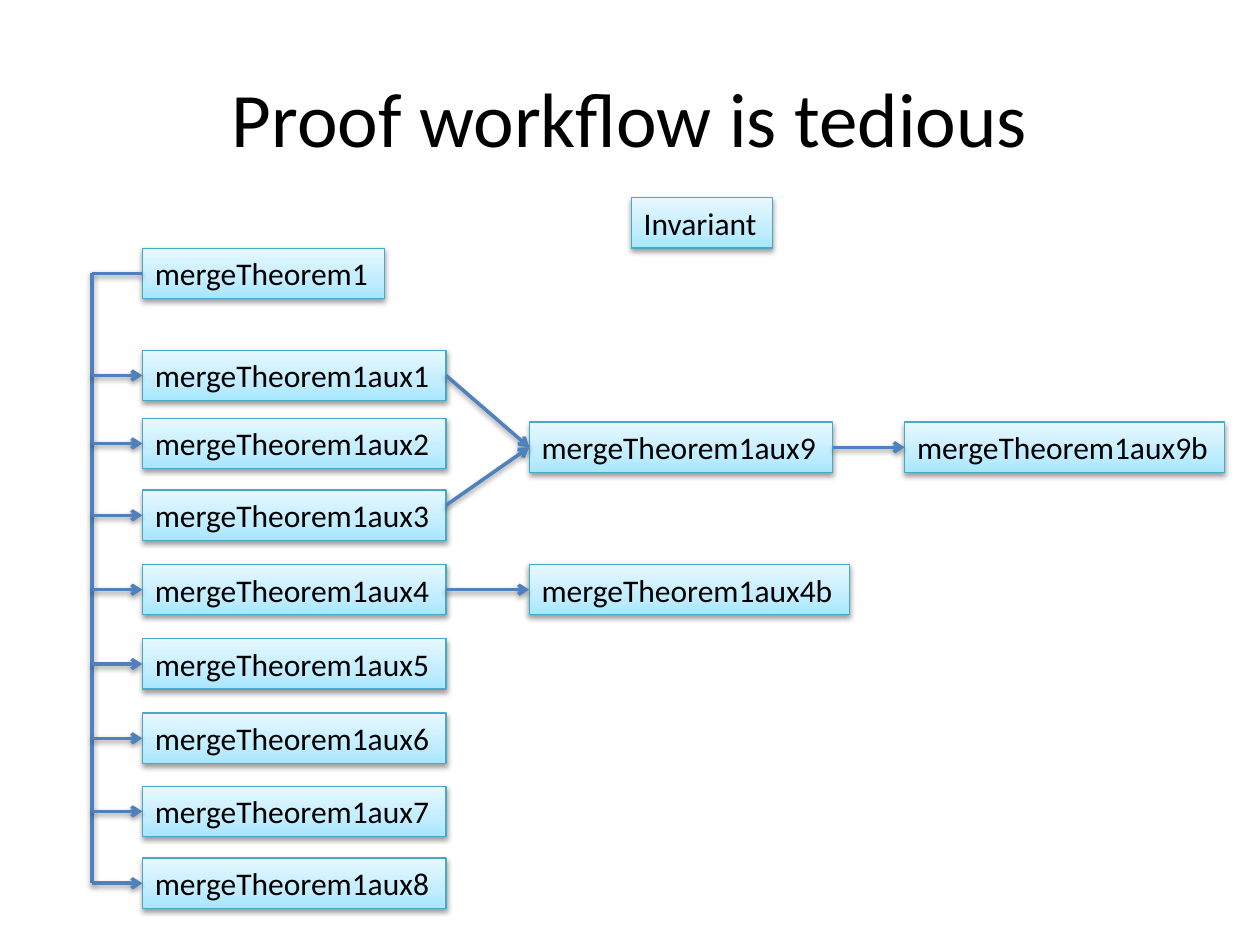
from copy import deepcopy
from dataclasses import dataclass

from lxml import etree
from pptx import Presentation, util as u
from pptx.dml.color import RGBColor
from pptx.enum import shapes, text
from pptx.oxml.ns import qn


@dataclass(frozen=True)
class Theme:
    font: str = "Calibri"
    title_size: int = 44
    box_size: int = 18
    ink: str = "000000"
    box_line: str = "46AAC5"
    arrow: str = "4F81BD"
    gradient: tuple = ((0, "A7E6FF"), (0.35, "C1EDFF"), (1, "E7F8FF"))


THEME = Theme()

# Content: label, column, top, width
TITLE = "Proof workflow is tedious"
ROOT = "mergeTheorem1"
LEMMA_TOPS = [2.78, 3.32, 3.89, 4.48, 5.07, 5.66, 6.24, 6.81]
LEMMAS = [f"{ROOT}aux{n}" for n in range(1, len(LEMMA_TOPS) + 1)]
BOXES = [
    (ROOT, 0, 1.97, 1.92),
    *[(lemma, 0, top, 2.41) for lemma, top in zip(LEMMAS, LEMMA_TOPS)],
    ("mergeTheorem1aux4b", 1, 4.48, 2.54),
    ("mergeTheorem1aux9", 1, 3.35, 2.41),
    ("mergeTheorem1aux9b", 2, 3.35, 2.54),
    ("Invariant", 3, 1.57, 1.12),
]
# Dependencies: from, to, distance of the start above the side's middle
LINKS = [
    ("mergeTheorem1aux1", "mergeTheorem1aux9", 0),
    ("mergeTheorem1aux3", "mergeTheorem1aux9", 0.08),
    ("mergeTheorem1aux9", "mergeTheorem1aux9b", 0),
    ("mergeTheorem1aux4", "mergeTheorem1aux4b", 0),
]

# Grid
COLUMNS = [1.13, 4.2, 7.18, 5.01]
BOX_HEIGHT = 0.4
TRUNK_X = 0.73
LEFT, RIGHT = 1, 3


def write(frame, words, *, size, align, anchor, wrap=True):
    frame.text = words
    frame.word_wrap = wrap
    frame.vertical_anchor = anchor
    paragraph = frame.paragraphs[0]
    paragraph.alignment = align
    font = paragraph.runs[0].font
    font.name, font.size = THEME.font, u.Pt(size)
    font.color.rgb = RGBColor.from_string(THEME.ink)


def add_shadow(part):
    effects = etree.SubElement(part.element.spPr, qn("a:effectLst"))
    shadow = etree.SubElement(effects, qn("a:outerShdw"), blurRad="40000",
                              dist="20000", dir="5400000", rotWithShape="0")
    color = etree.SubElement(shadow, qn("a:srgbClr"), val="000000")
    etree.SubElement(color, qn("a:alpha"), val="38000")


def fill_gradient(box):
    box.fill.gradient()
    box.fill.gradient_angle = 90
    stop_list = box.element.spPr.find(".//" + qn("a:gsLst"))
    stop_list.append(deepcopy(stop_list[-1]))
    for stop, (position, color) in zip(box.fill.gradient_stops, THEME.gradient):
        stop.position = position
        stop.color.rgb = RGBColor.from_string(color)


def add_box(slide, label, column, top, width):
    box = slide.shapes.add_shape(
        shapes.MSO_SHAPE.RECTANGLE, u.Inches(COLUMNS[column]), u.Inches(top),
        u.Inches(width), u.Inches(BOX_HEIGHT))
    fill_gradient(box)
    box.line.color.rgb = RGBColor.from_string(THEME.box_line)
    box.line.width = u.Pt(0.75)
    add_shadow(box)
    write(box.text_frame, label, size=THEME.box_size, wrap=False,
          align=text.PP_ALIGN.LEFT, anchor=text.MSO_ANCHOR.TOP)
    box.text_frame.auto_size = text.MSO_AUTO_SIZE.SHAPE_TO_FIT_TEXT
    return box


def add_line(slide, start, end, *, source=None, target=None, head=True):
    """Draw from start to end; source and target are (box, side) joins."""
    line = slide.shapes.add_connector(shapes.MSO_CONNECTOR.STRAIGHT, *start, *end)
    if source:
        line.begin_connect(*source)
    if target:
        line.end_connect(*target)
    line.line.color.rgb = RGBColor.from_string(THEME.arrow)
    line.line.width = u.Pt(2)
    if head:
        etree.SubElement(line.line._get_or_add_ln(), qn("a:tailEnd"), type="arrow")
    add_shadow(line)


def side_middle(box, side):
    return box.left + (box.width if side == RIGHT else 0), box.top + box.height // 2


def main():
    deck = Presentation()
    deck.slide_width, deck.slide_height = u.Inches(10), u.Inches(7.5)
    slide = deck.slides.add_slide(deck.slide_layouts[5])

    # Title
    title = slide.shapes.title
    title.left, title.top, title.width, title.height = map(
        u.Inches, (0.5, 0.3, 9, 1.25))
    write(title.text_frame, TITLE, size=THEME.title_size,
          align=text.PP_ALIGN.CENTER, anchor=text.MSO_ANCHOR.MIDDLE)

    # Theorem boxes
    boxes = {row[0]: add_box(slide, *row) for row in BOXES}

    # Dependencies between lemmas
    for source, target, rise in LINKS:
        x, y = side_middle(boxes[source], RIGHT)
        add_line(slide, (x, y - u.Inches(rise)), side_middle(boxes[target], LEFT),
                 source=None if rise else (boxes[source], RIGHT),
                 target=(boxes[target], LEFT))

    # Trunk from the main theorem, with a branch to each lemma
    trunk = u.Inches(TRUNK_X)
    root_end = side_middle(boxes[ROOT], LEFT)
    last_end = side_middle(boxes[LEMMAS[-1]], LEFT)
    add_line(slide, root_end, (trunk, root_end[1]),
             source=(boxes[ROOT], LEFT), head=False)
    add_line(slide, (trunk, root_end[1]), (trunk, last_end[1]), head=False)
    for lemma in LEMMAS:
        end = side_middle(boxes[lemma], LEFT)
        add_line(slide, (trunk, end[1]), end, target=(boxes[lemma], LEFT))

    deck.save("out.pptx")


if __name__ == "__main__":
    main()
